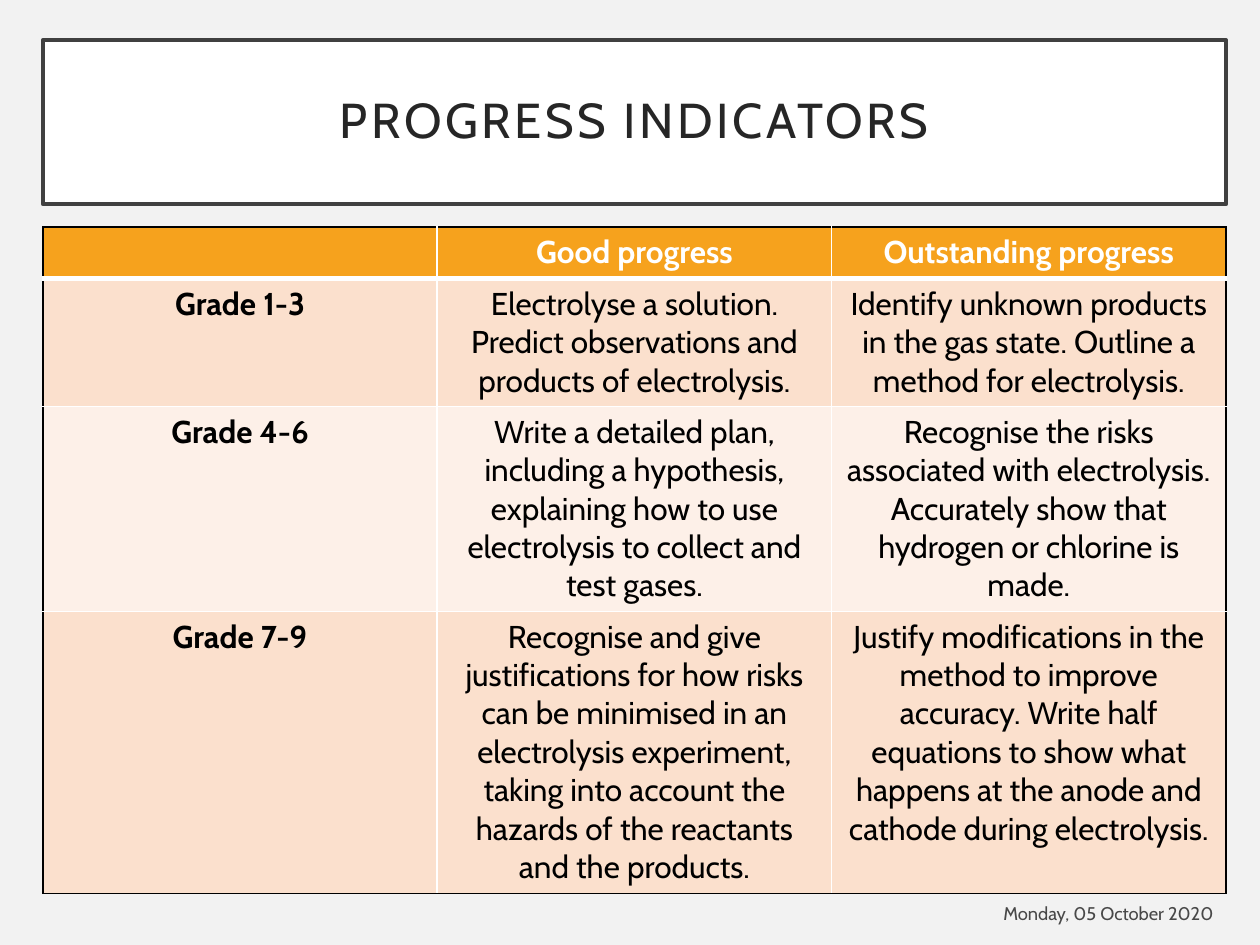
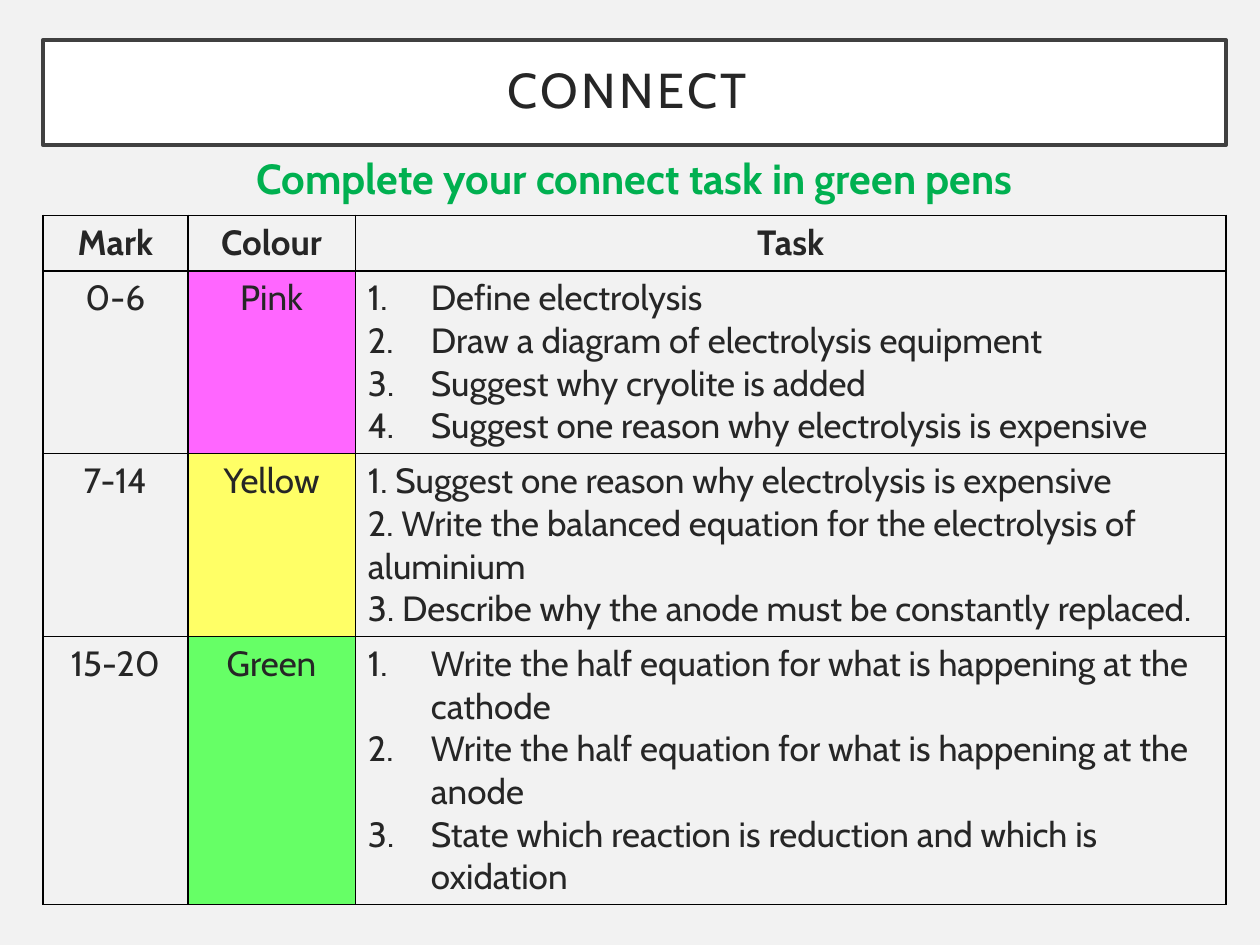
from lxml import etree
from pptx import Presentation
from pptx.dml.color import RGBColor
from pptx.enum.shapes import MSO_SHAPE as Shape
from pptx.enum.text import MSO_ANCHOR as Anchor, PP_ALIGN as Align
from pptx.oxml.ns import qn
from pptx.util import Emu, Inches, Pt

FONT = "Cabin"
BACKGROUND, WHITE, BLACK = "F2F2F2", "FFFFFF", "000000"
INK, FRAME, GREEN = "262626", "404040", "00B050"
HEADER, BAND_DARK, BAND_LIGHT = "F6A21D", "FBE0CD", "FDF0E8"
LEFT, WIDTH = 0.34, 9.39

PROGRESS = [
    ("", "Good progress", "Outstanding progress"),
    ("Grade 1-3",
     "Electrolyse a solution. Predict observations and products of electrolysis.",
     "Identify unknown products in the gas state. Outline a method for electrolysis."),
    ("Grade 4-6",
     "Write a detailed plan, including a hypothesis, explaining how to use "
     "electrolysis to collect and test gases.",
     "Recognise the risks associated with electrolysis. Accurately show that "
     "hydrogen or chlorine is made."),
    ("Grade 7-9",
     "Recognise and give justifications for how risks can be minimised in an "
     "electrolysis experiment, taking into account the hazards of the reactants "
     "and the products.",
     "Justify modifications in the method to improve accuracy. Write half equations "
     "to show what happens at the anode and cathode during electrolysis."),
]
PROGRESS_FILLS = [HEADER, BAND_DARK, BAND_LIGHT, BAND_DARK]
PROGRESS_HEIGHTS = [0.41, 1.01, 1.62, 2.24]

TASK_HEADINGS = ("Mark", "Colour", "Task")
# mark, colour name, colour, automatic numbering, tasks
TASKS = [
    ("0-6", "Pink", "FF66FF", True, [
        "Define electrolysis",
        "Draw a diagram of electrolysis equipment",
        "Suggest why cryolite is added",
        "Suggest one reason why electrolysis is expensive"]),
    ("7-14", "Yellow", "FFFF66", False, [
        "1. Suggest one reason why electrolysis is expensive",
        "2. Write the balanced equation for the electrolysis of aluminium",
        "3. Describe why the anode must be constantly replaced."]),
    ("15-20", "Green", "66FF66", True, [
        "Write the half equation for what is happening at the cathode",
        "Write the half equation for what is happening at the anode",
        "State which reaction is reduction and which is oxidation"]),
]
TASK_WIDTHS = [1.15, 1.33, 6.91]
TASK_HEIGHTS = [0.44, 1.45, 1.45, 2.13]


def rgb(colour):
    return RGBColor.from_string(colour)


def write(frame, lines, size, colour, align=Align.CENTER, bold=False, numbered=False):
    """Fill a text frame with one paragraph per line and return the last run."""
    for index, line in enumerate(lines):
        paragraph = frame.paragraphs[0] if index == 0 else frame.add_paragraph()
        paragraph.alignment = align
        run = paragraph.add_run()
        run.text = line
        for name, value in {"name": FONT, "size": Pt(size), "bold": bold}.items():
            setattr(run.font, name, value)
        run.font.color.rgb = rgb(colour)
        if numbered:
            properties = paragraph._p.get_or_add_pPr()
            properties.set("marL", str(Inches(0.5)))
            properties.set("indent", str(-Inches(0.5)))
            etree.SubElement(properties, qn("a:buFont"), typeface="+mj-lt")
            etree.SubElement(properties, qn("a:buAutoNum"), type="arabicPeriod")
    return run


def add_text(slide, box, text, size, colour, **format_values):
    frame = slide.shapes.add_textbox(*map(Inches, box)).text_frame
    frame.word_wrap = True
    return frame, write(frame, [text], size, colour, **format_values)


def add_titled_slide(presentation, title, height):
    slide = presentation.slides.add_slide(presentation.slide_layouts[6])
    slide.background.fill.solid()
    slide.background.fill.fore_color.rgb = rgb(BACKGROUND)
    band = slide.shapes.add_shape(
        Shape.RECTANGLE, *map(Inches, (LEFT, 0.32, WIDTH, height)))
    band.shadow.inherit = False
    band.fill.solid()
    band.fill.fore_color.rgb = rgb(WHITE)
    band.line.color.rgb = rgb(FRAME)
    band.line.width = Pt(2.5)
    frame = band.text_frame
    frame.word_wrap = True
    frame.vertical_anchor = Anchor.MIDDLE
    for side in ("left", "top", "right", "bottom"):
        setattr(frame, f"margin_{side}", Inches(0.2))
    run = write(frame, [title], 28, INK)
    run._r.get_or_add_rPr().set("spc", "200")
    frame.paragraphs[0].line_spacing = 0.9
    return slide


def add_grid(slide, top, widths, heights):
    """Add a table without banding and with the given columns and rows."""
    table = slide.shapes.add_table(
        len(heights), len(widths), Inches(LEFT), Inches(top),
        Inches(sum(widths)), Inches(sum(heights))).table
    table.first_row = table.horz_banding = False
    for column, width in zip(table.columns, widths):
        column.width = Inches(width)
    for row, height in zip(table.rows, heights):
        row.height = Inches(height)
    return table


def style_cell(cell, fill, borders):
    """Set the fill and the borders, given as (colour, points) for L, R, T and B."""
    if fill:
        cell.fill.solid()
        cell.fill.fore_color.rgb = rgb(fill)
    else:
        cell.fill.background()
    properties = cell._tc.get_or_add_tcPr()
    for index, (side, (colour, points)) in enumerate(zip("LRTB", borders)):
        line = etree.Element(qn(f"a:ln{side}"), w=str(Pt(points)))
        solid = etree.SubElement(line, qn("a:solidFill"))
        etree.SubElement(solid, qn("a:srgbClr"), val=colour)
        properties.insert(index, line)


def build_progress_slide(presentation):
    slide = add_titled_slide(presentation, "PROGRESS INDICATORS", 1.3)
    table = add_grid(slide, 1.8, [WIDTH / 3] * 3, PROGRESS_HEIGHTS)
    last_row, last_column = len(PROGRESS) - 1, len(PROGRESS[0]) - 1
    outer, inner, header_rule = (BLACK, 1), (WHITE, 1), (WHITE, 3)
    for r, (texts, fill) in enumerate(zip(PROGRESS, PROGRESS_FILLS)):
        for c, text in enumerate(texts):
            cell = table.cell(r, c)
            style_cell(cell, fill, [
                outer if c == 0 else inner,
                outer if c == last_column else inner,
                outer if r == 0 else header_rule if r == 1 else inner,
                outer if r == last_row else header_rule if r == 0 else inner])
            if text:
                write(cell.text_frame, [text], 18, WHITE if r == 0 else BLACK,
                      bold=r == 0 or c == 0)
    frame, run = add_text(slide, (7.47, 7.07, 2.26, 0.35), "Monday, 05 October 2020",
                          10.5, BLACK, align=Align.RIGHT)
    frame.vertical_anchor = Anchor.MIDDLE
    colour = run._r.find(".//" + qn("a:srgbClr"))
    etree.SubElement(colour, qn("a:alpha"), val="70000")


def build_connect_slide(presentation):
    slide = add_titled_slide(presentation, "CONNECT ", 0.83)
    table = add_grid(slide, 1.71, TASK_WIDTHS, TASK_HEIGHTS)
    borders = [(BLACK, 1)] * 4
    for c, heading in enumerate(TASK_HEADINGS):
        style_cell(table.cell(0, c), None, borders)
        write(table.cell(0, c).text_frame, [heading], 20, INK, bold=True)
    for r, (mark, name, colour, numbered, tasks) in enumerate(TASKS, start=1):
        for c, fill in enumerate((None, colour, None)):
            style_cell(table.cell(r, c), fill, borders)
        for c, text in enumerate((mark, name)):
            write(table.cell(r, c).text_frame, [text], 20, INK)
        write(table.cell(r, 2).text_frame, tasks, 20, INK,
              align=Align.LEFT, numbered=numbered)
    add_text(slide, (LEFT, 1.16, WIDTH, 0.6),
             "Complete your connect task in green pens", 24, GREEN, bold=True)


def main():
    presentation = Presentation()
    presentation.slide_width, presentation.slide_height = Inches(10), Inches(7.5)
    build_progress_slide(presentation)
    build_connect_slide(presentation)
    presentation.save("out.pptx")


if __name__ == "__main__":
    main()
